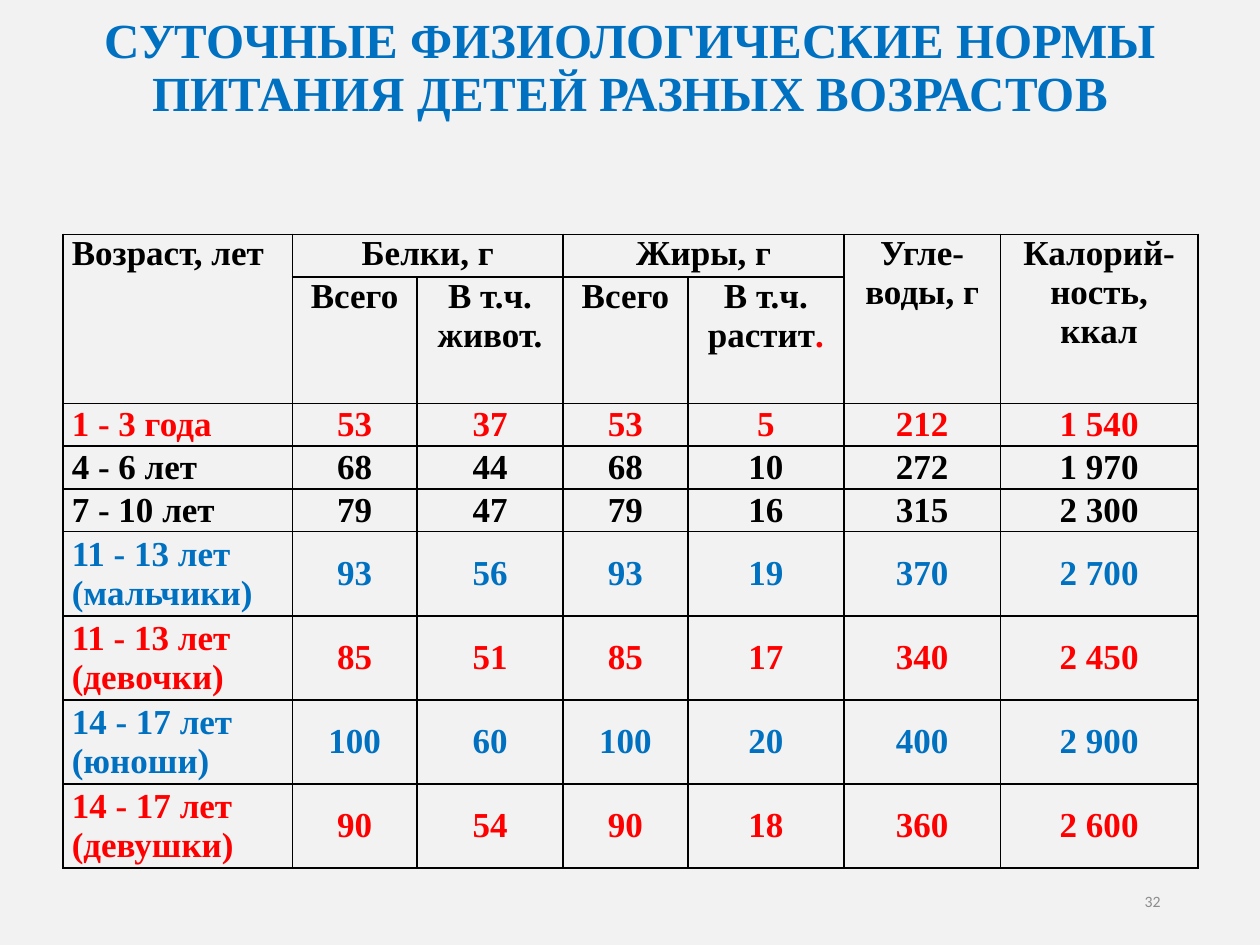
from lxml import etree
from pptx import Presentation
from pptx.dml.color import RGBColor
from pptx.enum.text import MSO_ANCHOR, PP_ALIGN
from pptx.oxml.ns import qn
from pptx.util import Inches, Pt

LEFT, CENTER, RIGHT = PP_ALIGN.LEFT, PP_ALIGN.CENTER, PP_ALIGN.RIGHT
TOP, MIDDLE = MSO_ANCHOR.TOP, MSO_ANCHOR.MIDDLE

BLACK = RGBColor(0x00, 0x00, 0x00)
RED = RGBColor(0xFF, 0x00, 0x00)
BLUE = RGBColor(0x00, 0x70, 0xC0)
GRAY = RGBColor(0x8C, 0x8C, 0x8C)
PALE = RGBColor(0xF2, 0xF2, 0xF2)
SERIF, SANS = "Times New Roman", "Calibri"

# Content
TITLE = "СУТОЧНЫЕ ФИЗИОЛОГИЧЕСКИЕ НОРМЫ ПИТАНИЯ ДЕТЕЙ РАЗНЫХ ВОЗРАСТОВ"
PAGE_NUMBER = "32"
HEADER = [
    ("Возраст, лет", "Белки, г", "", "Жиры, г", "", "Угле-воды, г", "Калорий-ность, ккал"),
    ("", "Всего", "В т.ч. живот.", "Всего", "В т.ч. растит", "", ""),
]
NORMS = [
    (RED, "1 - 3 года", "53", "37", "53", "5", "212", "1 540"),
    (BLACK, "4 - 6 лет", "68", "44", "68", "10", "272", "1 970"),
    (BLACK, "7 - 10 лет", "79", "47", "79", "16", "315", "2 300"),
    (BLUE, "11 - 13 лет (мальчики)", "93", "56", "93", "19", "370", "2 700"),
    (RED, "11 - 13 лет (девочки)", "85", "51", "85", "17", "340", "2 450"),
    (BLUE, "14 - 17 лет (юноши)", "100", "60", "100", "20", "400", "2 900"),
    (RED, "14 - 17 лет (девушки)", "90", "54", "90", "18", "360", "2 600"),
]
MERGES = [((0, 0), (1, 0)), ((0, 1), (0, 2)), ((0, 3), (0, 4)),
          ((0, 5), (1, 5)), ((0, 6), (1, 6))]
FILLED = [(1, 2), (1, 4)]

# Grid, in inches
COLUMNS = [1.82, 0.99, 1.16, 0.99, 1.24, 1.24, 1.57]
ONE_LINE, TWO_LINES = 0.34, 0.65
ROWS = [ONE_LINE, 0.93] + [ONE_LINE] * 3 + [TWO_LINES] * 4


def style_text(frame, size, font, color, bold, align):
    paragraph = frame.paragraphs[0]
    paragraph.alignment = align
    paragraph.font.size = Pt(size)
    for run in paragraph.runs:
        run.font.size, run.font.name, run.font.bold = Pt(size), font, bold
        run.font.color.rgb = color


def add_label(slide, box, text, size, font, color, bold, align):
    frame = slide.shapes.add_textbox(*map(Inches, box)).text_frame
    frame.word_wrap = True
    frame.vertical_anchor = MIDDLE
    frame.text = text
    style_text(frame, size, font, color, bold, align)
    return frame


def add_borders(cell):
    properties = cell._tc.get_or_add_tcPr()
    for side in ("a:lnL", "a:lnR", "a:lnT", "a:lnB"):
        line = etree.SubElement(properties, qn(side), w=str(Pt(1)))
        fill = etree.SubElement(line, qn("a:solidFill"))
        etree.SubElement(fill, qn("a:srgbClr"), val=str(BLACK))


def add_norms_table(slide):
    table = slide.shapes.add_table(
        len(ROWS), len(COLUMNS), Inches(0.5), Inches(1.86),
        Inches(sum(COLUMNS)), Inches(sum(ROWS))).table
    table.first_row = table.horz_banding = False
    for column, width in zip(table.columns, COLUMNS):
        column.width = Inches(width)
    for row, height in zip(table.rows, ROWS):
        row.height = Inches(height)

    lines = [(BLACK, TOP, texts) for texts in HEADER]
    lines += [(color, MIDDLE, texts) for color, *texts in NORMS]
    for r, (color, anchor, texts) in enumerate(lines):
        for c, text in enumerate(texts):
            cell = table.cell(r, c)
            cell.text = text
            cell.vertical_anchor = anchor
            cell.margin_left = cell.margin_right = Inches(0.07)
            cell.margin_top = cell.margin_bottom = 0
            style_text(cell.text_frame, 20, SERIF, color, True, CENTER if c else LEFT)
            add_borders(cell)
            if (r, c) in FILLED:
                cell.fill.solid()
                cell.fill.fore_color.rgb = PALE
            else:
                cell.fill.background()

    # Red full stop after the vegetable fats heading
    heading = table.cell(1, 4).text_frame
    stop = heading.paragraphs[0].add_run()
    stop.text = "."
    style_text(heading, 20, SERIF, BLACK, True, CENTER)
    stop.font.color.rgb = RED

    for first, last in MERGES:
        table.cell(*first).merge(table.cell(*last))


def main():
    deck = Presentation()
    deck.slide_width, deck.slide_height = Inches(10), Inches(7.5)
    slide = deck.slides.add_slide(deck.slide_layouts[6])
    slide.background.fill.solid()
    slide.background.fill.fore_color.rgb = PALE

    title = add_label(slide, (0.5, -0.19, 9, 1.48), TITLE, 28, SERIF, BLUE, True, CENTER)
    title.paragraphs[0].line_spacing = 0.9
    add_norms_table(slide)
    add_label(slide, (7.06, 6.95, 2.25, 0.4), PAGE_NUMBER, 9, SANS, GRAY, False, RIGHT)
    deck.save("out.pptx")


if __name__ == "__main__":
    main()
